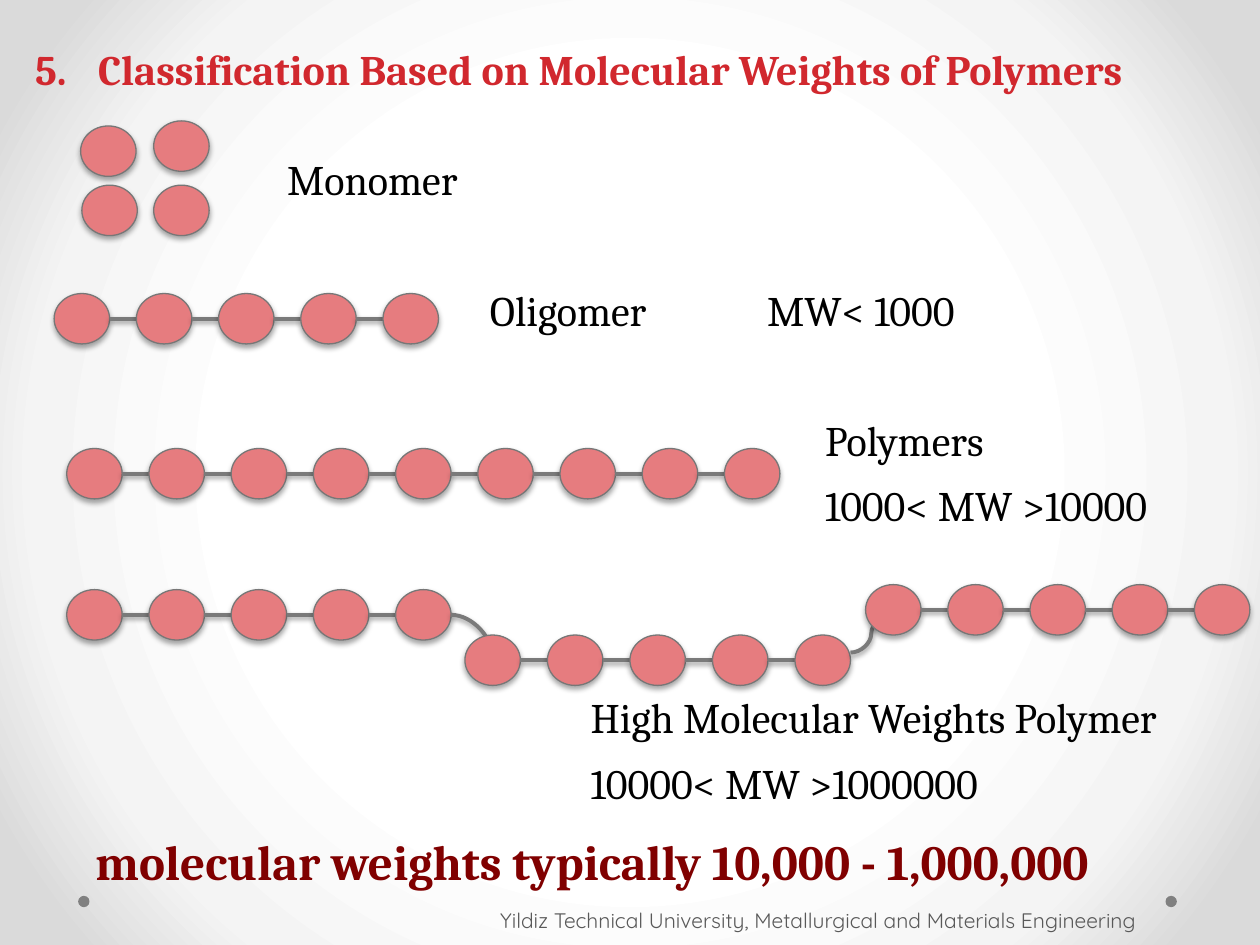
from dataclasses import dataclass

from pptx import Presentation
from pptx import util as u
from pptx.dml.color import RGBColor
from pptx.enum import shapes, text
from pptx.oxml import parse_xml
from pptx.oxml.ns import nsdecls

IN = u.Inches


@dataclass(frozen=True)
class Theme:
    face: str = "Cambria"
    foot: str = "Quicksand"
    title: str = "D1282E"
    ink: str = "000000"
    claim: str = "800000"
    note: str = "595959"
    bead: str = "E67C7F"
    rim: str = "777777"
    bond: str = "7A7A7A"
    dot: str = "808080"
    body: int = 24
    big: int = 28
    small: int = 12
    glow: tuple = ((50, "FFFFFF"), (76, "F4F4F4"), (92, "DADADA"))


def rgb(code):
    return RGBColor.from_string(code)


def node(xml):
    """Parse one element whose first tag lacks the drawing namespaces."""
    head, rest = xml.split(">", 1)
    slash = "/" if head.endswith("/") else ""
    return parse_xml(f"{head.rstrip('/')} {nsdecls('a', 'p')}{slash}>{rest}")


def shade(alpha, dist):
    return node(
        f'<a:effectLst><a:outerShdw blurRad="{u.Pt(3.1)}" dist="{u.Pt(dist)}" '
        f'dir="5400000" rotWithShape="0"><a:srgbClr val="000000">'
        f'<a:alpha val="{alpha * 1000}"/></a:srgbClr></a:outerShdw></a:effectLst>')


class Board:
    """Draws on one slide in one theme."""
    WIDE, HIGH = 0.44, 0.4

    def __init__(self, slide, theme):
        self.slide, self.theme = slide, theme

    def back(self):
        stops = "".join(f'<a:gs pos="{p * 1000}"><a:srgbClr val="{c}"/></a:gs>'
                        for p, c in self.theme.glow)
        self.slide.element.cSld.insert(0, node(
            f'<p:bg><p:bgPr><a:gradFill rotWithShape="1"><a:gsLst>{stops}</a:gsLst>'
            '<a:path path="circle"><a:fillToRect l="50000" t="50000" r="50000" '
            'b="50000"/></a:path></a:gradFill><a:effectLst/></p:bgPr></p:bg>'))

    def oval(self, x, y, w, h, fill):
        item = self.slide.shapes.add_shape(
            shapes.MSO_SHAPE.OVAL, IN(x), IN(y), IN(w), IN(h))
        item.fill.solid()
        item.fill.fore_color.rgb = rgb(fill)
        item.line.fill.background()
        item.shadow.inherit = False
        return item

    def dot(self, x, y):
        self.oval(x, y, 0.09, 0.09, self.theme.dot)

    def bead(self, x, y):
        item = self.oval(x, y, self.WIDE, self.HIGH, self.theme.bead)
        item.line.color.rgb = rgb(self.theme.rim)
        item.line.width = u.Pt(0.75)
        props = item.element.spPr
        props.replace(props.find(".//{*}effectLst"), shade(35, 1.8))

    def bond(self, start, end, kind=shapes.MSO_CONNECTOR.STRAIGHT, form=None):
        item = self.slide.shapes.add_connector(
            kind, *(IN(v) for v in (*start, *end)))
        item.line.color.rgb = rgb(self.theme.bond)
        item.line.width = u.Pt(2.25)
        props = item.element.spPr
        if form:
            props.find("{*}prstGeom").set("prst", form)
        props.append(shade(38, 1.6))

    def chain(self, first, last, y, count):
        """Space beads evenly from first to last, with a bond in each gap."""
        step = (last - first) / (count - 1)
        mid = y + self.HIGH / 2
        for i in range(count):
            x = first + i * step
            if i:
                self.bond((x - step + self.WIDE, mid), (x, mid))
            self.bead(x, y)

    def label(self, x, y, w, h, *lines, size=None, face=None, color=None,
              bold=False, lead=None, align=None, start=None, tab=None,
              left=0.1, anchor=text.MSO_ANCHOR.TOP):
        th = self.theme
        frame = self.slide.shapes.add_textbox(IN(x), IN(y), IN(w), IN(h)).text_frame
        frame.word_wrap = True
        frame.margin_left = IN(left)
        frame.vertical_anchor = anchor
        for i, line in enumerate(lines):
            para = frame.add_paragraph() if i else frame.paragraphs[0]
            props = para._p.get_or_add_pPr()
            if start:
                props.set("marL", str(IN(0.5)))
                props.set("indent", str(IN(-0.5)))
                props.append(node(f'<a:buClr><a:srgbClr val="{color}"/></a:buClr>'))
                props.append(node(
                    f'<a:buAutoNum type="arabicPeriod" startAt="{start}"/>'))
            if tab:
                props.append(node(
                    f'<a:tabLst><a:tab pos="{IN(tab)}" algn="l"/></a:tabLst>'))
            para.alignment = align
            para.line_spacing = lead
            run = para.add_run()
            run.text = line
            font = run.font
            font.name, font.size, font.bold = face or th.face, u.Pt(size or th.body), bold
            font.color.rgb = rgb(color or th.ink)


def main():
    deck = Presentation()
    deck.slide_width, deck.slide_height = IN(10), IN(7.5)
    th = Theme()
    board = Board(deck.slides.add_slide(deck.slide_layouts[6]), th)
    curve = shapes.MSO_CONNECTOR.CURVE

    board.back()
    for x in (9.25, 0.62):
        board.dot(x, 7.11)
    board.label(3.92, 7.1, 6.08, 0.4,
                "Yildiz Technical University, Metallurgical and Materials Engineering",
                size=th.small, face=th.foot, color=th.note, left=0.05,
                anchor=text.MSO_ANCHOR.MIDDLE)
    board.label(0.18, 0.3, 9.33, 0.5,
                "Classification Based on Molecular Weights of Polymers",
                color=th.title, bold=True, start=5, align=text.PP_ALIGN.JUSTIFY)

    # Monomer, oligomer and polymer
    for x, y in ((0.64, 1), (1.22, 0.96), (0.65, 1.47), (1.22, 1.47)):
        board.bead(x, y)
    board.chain(0.43, 3.04, 2.33, 5)
    board.chain(0.53, 5.75, 3.56, 9)

    # High molecular weight polymer: three chains joined by curves
    board.chain(0.53, 3.14, 4.68, 5)
    board.bond((3.58, 4.88), (3.92, 5.25), curve, "curvedConnector2")
    board.chain(3.69, 6.31, 5.04, 5)
    board.bond((6.75, 5.18), (7.08, 4.88), curve)
    board.chain(6.87, 9.48, 4.64, 5)

    board.label(2.18, 1.17, 1.68, 0.5, "Monomer")
    board.label(3.79, 2.21, 4.3, 0.5, "Oligomer\tMW< 1000", tab=2.2)
    board.label(6.45, 3.12, 2.88, 1.13, "Polymers", "1000< MW >10000", lead=1.3)
    board.label(4.59, 5.32, 5.33, 1.13, "High Molecular Weights Polymer",
                "10000< MW >1000000", lead=1.3)
    board.label(0.66, 6.55, 8.56, 0.57,
                "molecular weights typically 10,000 - 1,000,000",
                size=th.big, color=th.claim, bold=True)
    deck.save("out.pptx")


if __name__ == "__main__":
    main()
